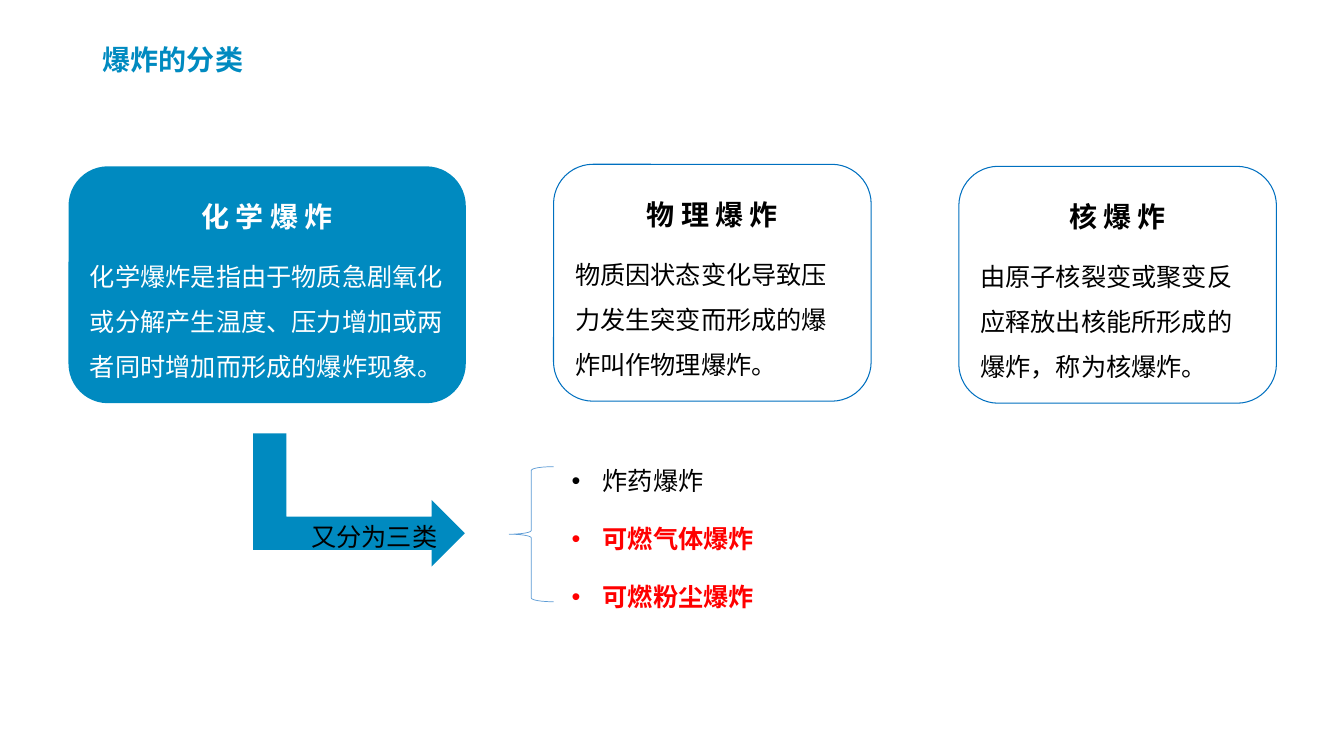
from dataclasses import dataclass

from lxml import etree
from pptx import Presentation
from pptx.dml.color import RGBColor
from pptx.enum.shapes import MSO_SHAPE
from pptx.enum.text import MSO_ANCHOR, PP_ALIGN
from pptx.oxml.ns import qn
from pptx.util import Inches, Pt

ROUND = MSO_SHAPE.ROUNDED_RECTANGLE
BENT = MSO_SHAPE.BENT_UP_ARROW
BRACE = MSO_SHAPE.LEFT_BRACE
TOP, MIDDLE = MSO_ANCHOR.TOP, MSO_ANCHOR.MIDDLE
LEFT, CENTER = PP_ALIGN.LEFT, PP_ALIGN.CENTER

FONT = "Noto Sans CJK SC"
COLORS = {
    "main": "008AC0",
    "edge": "0070C0",
    "brace": "5B9BD5",
    "text": "000000",
    "light": "FFFFFF",
    "alert": "FF0000",
}


@dataclass
class Card:
    left: float
    top: float
    width: float
    head: str
    body: str
    fill: str = ""
    line: str = "edge"
    ink: str = "text"


@dataclass
class Item:
    text: str
    ink: str = "alert"
    bold: bool = True


CARDS = [
    Card(5.49, 1.63, 3.15, "物 理 爆 炸",
         "物质因状态变化导致压力发生突变而形成的爆炸叫作物理爆炸。"),
    Card(0.68, 1.65, 3.94, "化 学 爆 炸",
         "化学爆炸是指由于物质急剧氧化或分解产生温度、压力增加或两者同时增加而形成的爆炸现象。",
         "main", "", "light"),
    Card(9.51, 1.65, 3.15, "核 爆 炸",
         "由原子核裂变或聚变反应释放出核能所形成的爆炸，称为核爆炸。"),
]
ITEMS = [
    Item("炸药爆炸", "text", False),
    Item("可燃气体爆炸"),
    Item("可燃粉尘爆炸"),
]


def color(name: str) -> RGBColor:
    return RGBColor.from_string(COLORS[name])


def write(para, text: str, size: float, ink: str, bold: bool = False,
          align=LEFT, space: float = 1.5, before: float = 0) -> None:
    """Fill one paragraph and format its run."""
    para.text = text
    para.alignment = align
    para.line_spacing = space
    para.space_before = Pt(before)
    font = para.runs[0].font
    font.size, font.bold = Pt(size), bold
    font.color.rgb = color(ink)
    font.name = FONT
    latin = para.runs[0].font._element.find(qn("a:latin"))
    east = etree.Element(qn("a:ea"), typeface=FONT)
    latin.addnext(east)


def bullet(para) -> None:
    """Add a hanging round bullet."""
    props = para._p.get_or_add_pPr()
    props.set("marL", str(Inches(0.31)))
    props.set("indent", str(-Inches(0.31)))
    etree.SubElement(props, qn("a:buFont"), typeface="Arial")
    etree.SubElement(props, qn("a:buChar"), char="•")


def draw(slide, kind, left: float, top: float, width: float, height: float,
         fill: str = "", line: str = "", weight: float = 0.75):
    """Add a flat preset shape."""
    shape = slide.shapes.add_shape(
        kind, Inches(left), Inches(top), Inches(width), Inches(height))
    shape.shadow.inherit = False
    if fill:
        shape.fill.solid()
        shape.fill.fore_color.rgb = color(fill)
    else:
        shape.fill.background()
    if line:
        shape.line.color.rgb = color(line)
        shape.line.width = Pt(weight)
    else:
        shape.line.fill.background()
    return shape


def add_card(slide, card: Card) -> None:
    shape = draw(slide, ROUND, card.left, card.top, card.width, 2.35,
                 card.fill, card.line)
    frame = shape.text_frame
    frame.word_wrap = True
    frame.vertical_anchor = TOP
    write(frame.paragraphs[0], card.head, 20, card.ink, True, CENTER)
    write(frame.add_paragraph(), card.body, 18, card.ink, before=9)


def add_box(slide, left: float, top: float, width: float, height: float,
            wrap: bool):
    box = slide.shapes.add_textbox(
        Inches(left), Inches(top), Inches(width), Inches(height))
    box.text_frame.word_wrap = wrap
    return box.text_frame


def add_title(slide, text: str) -> None:
    title = slide.shapes.title
    title.left, title.top = Inches(0.92), Inches(0.36)
    title.width, title.height = Inches(6.48), Inches(0.45)
    frame = title.text_frame
    frame.vertical_anchor = MIDDLE
    frame.margin_bottom = 0
    write(frame.paragraphs[0], text, 20, "main", True, space=0.9)


def main() -> None:
    deck = Presentation()
    deck.slide_width, deck.slide_height = Inches(13.33), Inches(7.5)
    slide = deck.slides.add_slide(deck.slide_layouts[5])
    add_title(slide, "爆炸的分类")

    # Three kinds of explosion
    for card in CARDS:
        add_card(slide, card)

    # Subtypes of the chemical kind
    frame = add_box(slide, 5.57, 4.42, 3.15, 1.77, True)
    for i, item in enumerate(ITEMS):
        para = frame.add_paragraph() if i else frame.paragraphs[0]
        bullet(para)
        write(para, item.text, 18, item.ink, item.bold, before=9 if i else 0)

    # Arrow with its label, and the brace
    arrow = draw(slide, BENT, 2.9, 3.91, 1.32, 2.1, "main")
    arrow.rotation = 90
    label = add_box(slide, 2.99, 4.91, 1.46, 0.62, False)
    write(label.paragraphs[0], "又分为三类", 18, "text", space=1.7)
    draw(slide, BRACE, 5.05, 4.63, 0.44, 1.34, line="brace", weight=0.5)

    deck.save("out.pptx")


if __name__ == "__main__":
    main()
